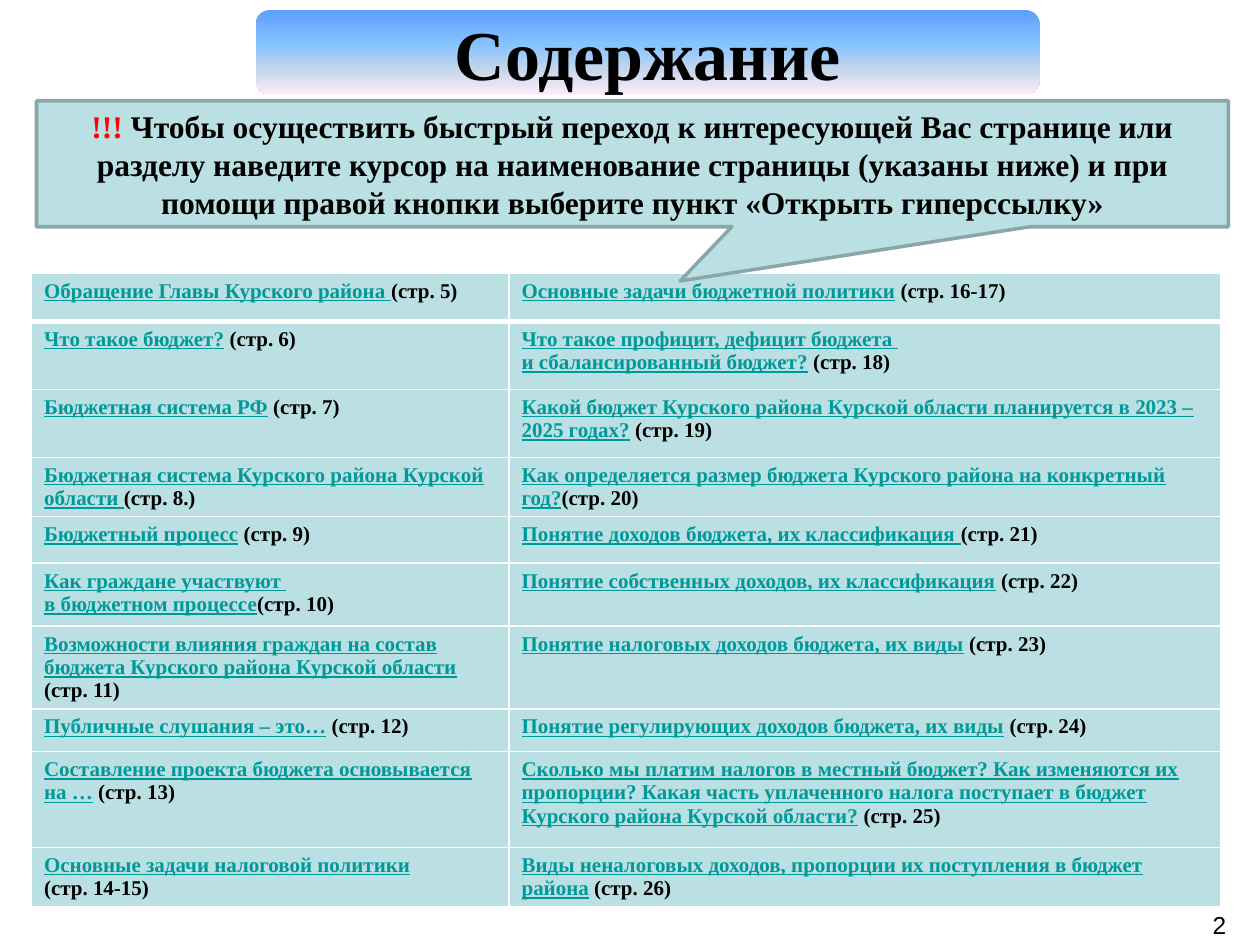
from dataclasses import dataclass

from lxml import etree
from pptx import Presentation
from pptx.dml.color import RGBColor
from pptx.enum.shapes import MSO_SHAPE
from pptx.enum.text import MSO_ANCHOR, PP_ALIGN
from pptx.oxml.ns import qn
from pptx.util import Inches, Pt

ROUNDED, CALLOUT = MSO_SHAPE.ROUNDED_RECTANGLE, MSO_SHAPE.RECTANGULAR_CALLOUT
LEFT, CENTER, RIGHT, JUSTIFY = PP_ALIGN.LEFT, PP_ALIGN.CENTER, PP_ALIGN.RIGHT, PP_ALIGN.JUSTIFY
MIDDLE, TOP = MSO_ANCHOR.MIDDLE, MSO_ANCHOR.TOP

COLORS = {
    "panel": "BBE0E3", "panel_line": "8AA6A8", "link": "009999",
    "text": "000000", "alert": "FF0000", "border": "FFFFFF",
}
TITLE_GRADIENT = [(0, "5E9EFF"), (40, "85C2FF"), (70, "C4D6EB"), (100, "FFEBFA")]

SERIF = {"name": "Times New Roman", "bold": True}
TITLE_FONT = {**SERIF, "size": Pt(40)}
NOTICE_FONT = {**SERIF, "size": Pt(18)}
ENTRY_FONT = {**SERIF, "size": Pt(12)}
NUMBER_FONT = {"name": "Arial", "size": Pt(14)}

# The slide is a grid of 100 columns by 75 rows
SLIDE_COLUMNS, SLIDE_ROWS = 100, 75
CELL = Inches(0.1)


@dataclass(frozen=True)
class Box:
    column: float
    row: float
    columns: float
    rows: float

    def lengths(self) -> list[int]:
        return [round(n * CELL) for n in (self.column, self.row, self.columns, self.rows)]


@dataclass(frozen=True)
class Run:
    text: str
    color: str = "text"
    underline: bool = False


@dataclass(frozen=True)
class Entry:
    link: str
    page: str
    alignment: int = LEFT

    def paragraphs(self) -> list[list[Run]]:
        """Split link and page at line ends into paragraphs of runs."""
        paragraphs = [[]]
        for text, color in ((self.link, "link"), (self.page, "text")):
            for index, line in enumerate(text.split("\n")):
                if index:
                    paragraphs.append([])
                paragraphs[-1].append(Run(line, color, color == "link"))
        return paragraphs


TITLE_BOX = Box(20.3, 0.8, 62.2, 6.7)
NOTICE_BOX = Box(2.9, 8, 94.6, 10)
TABLE_BOX = Box(2.5, 21.7, 94.4, 50.2)
NUMBER_BOX = Box(75, 71.7, 23.3, 3.3)
COLUMN_WIDTHS = [37.9, 56.5]
ROW_HEIGHTS = [3.8, 5.4, 5.4, 4.7, 3.7, 5, 6.5, 3.4, 7.6, 4.7]

CONTENTS = [
    (Entry("Обращение Главы Курского района ", "(стр. 5)"),
     Entry("Основные задачи бюджетной политики", " (стр. 16-17)")),
    (Entry("Что такое бюджет?", " (стр. 6)"),
     Entry("Что такое профицит, дефицит бюджета \nи сбалансированный бюджет?",
           " (стр. 18)", JUSTIFY)),
    (Entry("Бюджетная система РФ", " (стр. 7)"),
     Entry("Какой бюджет Курского района Курской области планируется в 2023 – 2025 годах?",
           " (стр. 19)")),
    (Entry("Бюджетная система Курского района Курской области ", "(стр. 8.)"),
     Entry("Как определяется размер бюджета Курского района на конкретный год?", "(стр. 20)")),
    (Entry("Бюджетный процесс", " (стр. 9)"),
     Entry("Понятие доходов бюджета, их классификация ", "(стр. 21)")),
    (Entry("Как граждане участвуют \nв бюджетном процессе", "(стр. 10)"),
     Entry("Понятие собственных доходов, их классификация", " (стр. 22)")),
    (Entry("Возможности влияния граждан на состав бюджета Курского района Курской области",
           " (стр. 11)"),
     Entry("Понятие налоговых доходов бюджета, их виды", " (стр. 23)")),
    (Entry("Публичные слушания – это…", " (стр. 12)"),
     Entry("Понятие регулирующих доходов бюджета, их виды", " (стр. 24)")),
    (Entry("Составление проекта бюджета основывается на …", " (стр. 13)"),
     Entry("Сколько мы платим налогов в местный бюджет? Как изменяются их пропорции? "
           "Какая часть уплаченного налога поступает в бюджет Курского района "
           "Курской области?", " (стр. 25)")),
    (Entry("Основные задачи налоговой политики", " \n(стр. 14-15)"),
     Entry("Виды неналоговых доходов, пропорции их поступления в бюджет района", " (стр. 26)")),
]


def rgb(name: str) -> RGBColor:
    return RGBColor.from_string(COLORS[name])


def write(text_frame, paragraphs: list[list[Run]], font: dict, alignment: int) -> None:
    for index, runs in enumerate(paragraphs):
        paragraph = text_frame.add_paragraph() if index else text_frame.paragraphs[0]
        paragraph.alignment = alignment
        for item in runs:
            run = paragraph.add_run()
            run.text = item.text
            for attribute, value in {**font, "underline": item.underline}.items():
                setattr(run.font, attribute, value)
            run.font.color.rgb = rgb(item.color)


def add_panel(slide, preset: int, box: Box, adjustments: list[float]):
    shape = slide.shapes.add_shape(preset, *box.lengths())
    shape.shadow.inherit = False
    shape.text_frame.vertical_anchor = MIDDLE
    for index, value in enumerate(adjustments):
        shape.adjustments[index] = value
    return shape


def fill_gradient(shape, stops: list[tuple[int, str]]) -> None:
    """Vertical gradient with any number of stops."""
    shape.fill.gradient()
    gradient = shape._element.spPr.find(qn("a:gradFill"))
    stop_list = gradient.find(qn("a:gsLst"))
    for stop in list(stop_list):
        stop_list.remove(stop)
    for percent, color in stops:
        stop = etree.SubElement(stop_list, qn("a:gs"), pos=str(percent * 1000))
        etree.SubElement(stop, qn("a:srgbClr"), val=color)
    gradient.find(qn("a:lin")).set("ang", str(90 * 60000))


def set_borders(cell, widths: dict[str, float]) -> None:
    properties = cell._tc.get_or_add_tcPr()
    for index, (side, width) in enumerate(widths.items()):
        line = etree.Element(qn(f"a:ln{side}"), w=str(Pt(width)))
        fill = etree.SubElement(line, qn("a:solidFill"))
        etree.SubElement(fill, qn("a:srgbClr"), val=COLORS["border"])
        properties.insert(index, line)


def add_contents(slide) -> None:
    table = slide.shapes.add_table(
        len(CONTENTS), len(COLUMN_WIDTHS), *TABLE_BOX.lengths()).table
    table.horz_banding = False
    for column, width in zip(table.columns, COLUMN_WIDTHS):
        column.width = round(width * CELL)
    for row, height in zip(table.rows, ROW_HEIGHTS):
        row.height = round(height * CELL)
    for row_index, entries in enumerate(CONTENTS):
        # A thick rule separates the first row from the rest
        top, bottom = 3 if row_index == 1 else 1, 3 if row_index == 0 else 1
        for column_index, entry in enumerate(entries):
            cell = table.cell(row_index, column_index)
            cell.vertical_anchor = TOP
            cell.fill.solid()
            cell.fill.fore_color.rgb = rgb("panel")
            set_borders(cell, {"L": 1, "R": 1, "T": top, "B": bottom})
            write(cell.text_frame, entry.paragraphs(), ENTRY_FONT, entry.alignment)


def main() -> None:
    presentation = Presentation()
    presentation.slide_width = SLIDE_COLUMNS * CELL
    presentation.slide_height = SLIDE_ROWS * CELL
    slide = presentation.slides.add_slide(presentation.slide_layouts[6])

    # Title
    title = add_panel(slide, ROUNDED, TITLE_BOX, [0.167])
    fill_gradient(title, TITLE_GRADIENT)
    title.line.fill.background()
    title.text_frame.word_wrap = False
    write(title.text_frame, [[Run("Содержание")]], TITLE_FONT, CENTER)

    # Table of contents
    add_contents(slide)

    # Notice pointing at the table
    notice = add_panel(slide, CALLOUT, NOTICE_BOX, [0.04, 0.93])
    notice.fill.solid()
    notice.fill.fore_color.rgb = rgb("panel")
    notice.line.color.rgb = rgb("panel_line")
    notice.line.width = Pt(2)
    write(notice.text_frame, [[Run("!!! ", "alert"), Run(
        "Чтобы осуществить быстрый переход к интересующей Вас странице или разделу "
        "наведите курсор на наименование страницы (указаны ниже) и при помощи правой "
        "кнопки выберите пункт «Открыть гиперссылку»")]], NOTICE_FONT, CENTER)

    # Page number
    number = slide.shapes.add_textbox(*NUMBER_BOX.lengths())
    number.text_frame.word_wrap = True
    write(number.text_frame, [[Run("2")]], NUMBER_FONT, RIGHT)

    presentation.save("out.pptx")


if __name__ == "__main__":
    main()
